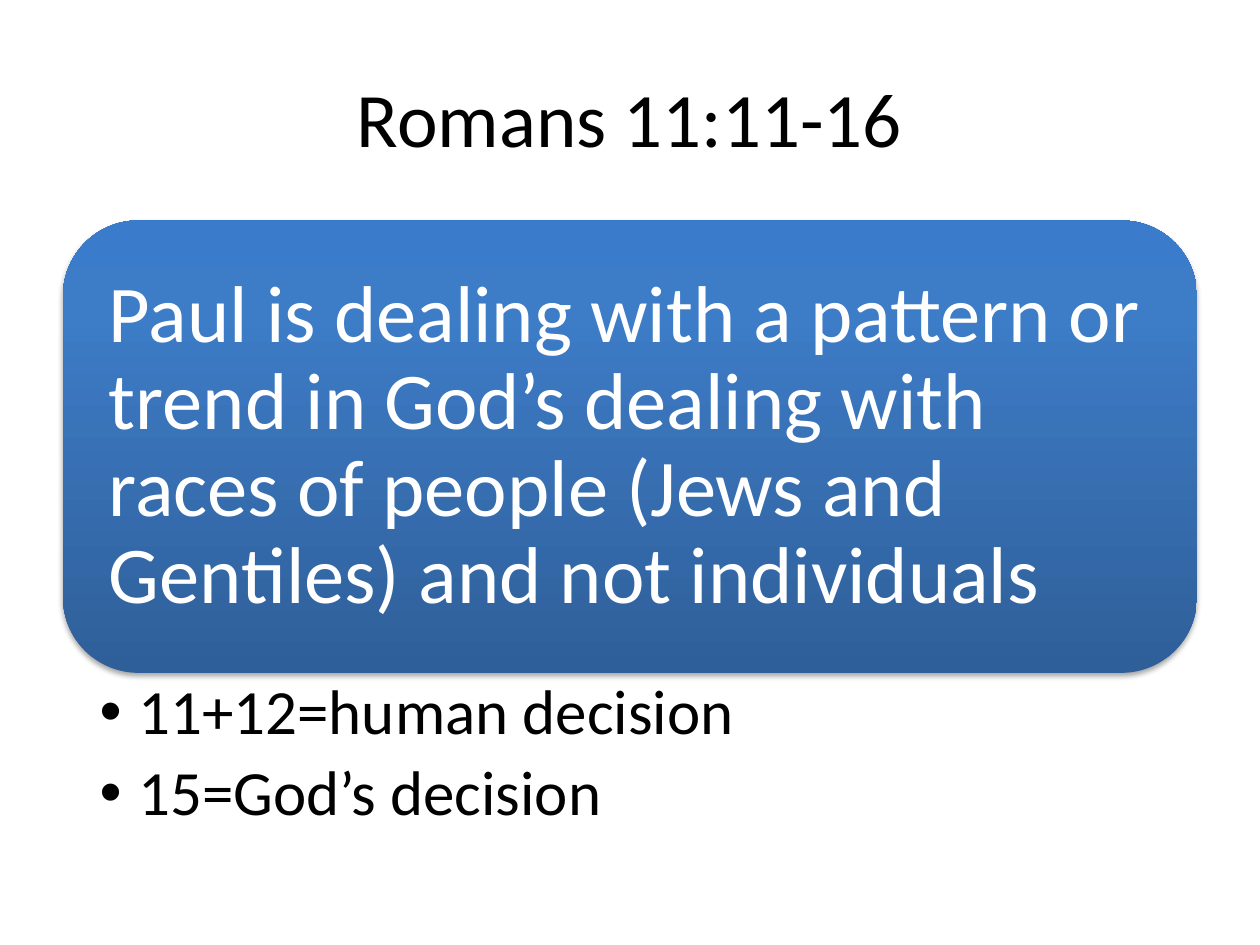
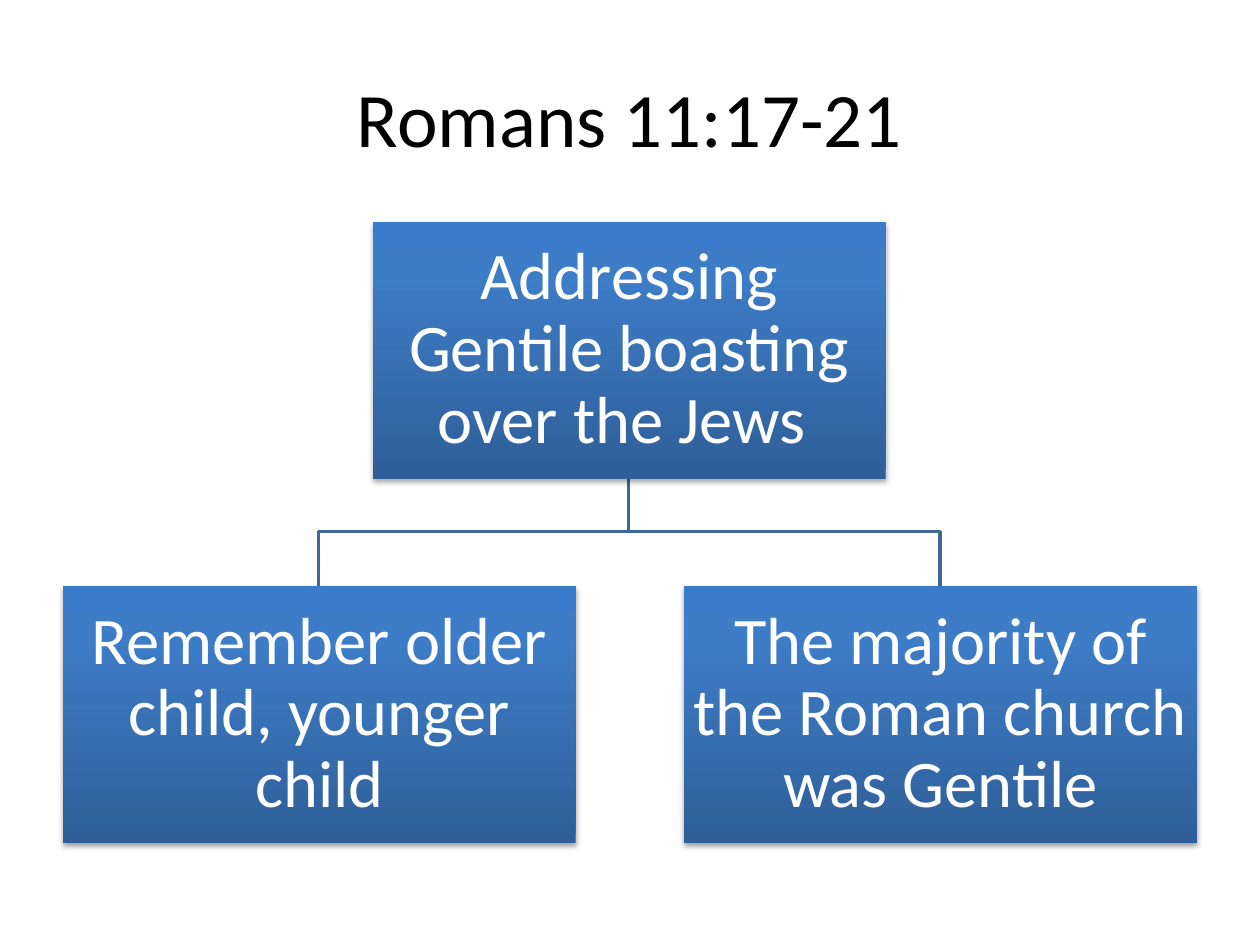
"""Build two Romans 11 slides: a key statement with notes, and a small hierarchy."""
from dataclasses import dataclass

from pptx import Presentation
from pptx import util as u
from pptx.dml.color import RGBColor
from pptx.enum import shapes, text
from pptx.oxml import ns, parse_xml

PX = 9144
FONT = "Calibri"
BLACK = RGBColor(0x00, 0x00, 0x00)
WHITE = RGBColor(0xFF, 0xFF, 0xFF)
BRANCH_BLUE = RGBColor(0x3F, 0x67, 0x97)
GRADIENT = (
    (0, RGBColor(0x2F, 0x5F, 0x99)),
    (80, RGBColor(0x3D, 0x7C, 0xC7)),
    (100, RGBColor(0x3A, 0x7C, 0xCB)),
)

TITLE_LAYOUT, TITLE_AND_BODY_LAYOUT = 5, 1
MARGIN, CONTENT_WIDTH = 50, 900
NODE_WIDTH, NODE_HEIGHT = 407, 204
ROOT_TOP, BRANCH_Y, CHILD_TOP = 176, 422, 465


@dataclass(frozen=True)
class Panel:
    """A gradient panel with white text, measured in px."""
    wording: str
    left: int
    top: int
    width: int = NODE_WIDTH
    height: int = NODE_HEIGHT
    outline: shapes.MSO_SHAPE = shapes.MSO_SHAPE.RECTANGLE
    size: int = 38
    inset: int = 3
    align: text.PP_ALIGN = text.PP_ALIGN.CENTER
    shadow_alpha: int = 38
    shadow_distance: int = 20000

    @property
    def center(self) -> int:
        """Return the horizontal middle."""
        return self.left + self.width // 2


def place(shape, left: int, top: int, width: int, height: int) -> None:
    """Move and size a shape in px."""
    shape.left, shape.top = left * PX, top * PX
    shape.width, shape.height = width * PX, height * PX


def set_insets(frame, left: int, top: int, right: int, bottom: int) -> None:
    """Set the four text insets in px."""
    frame.margin_left, frame.margin_top = left * PX, top * PX
    frame.margin_right, frame.margin_bottom = right * PX, bottom * PX


def style(paragraph, size: int, color: RGBColor) -> None:
    """Set the font of a paragraph."""
    paragraph.font.name = FONT
    paragraph.font.size = u.Pt(size)
    paragraph.font.color.rgb = color


def add_titled_slide(deck, layout: int, heading: str):
    """Add a slide with its formatted title."""
    slide = deck.slides.add_slide(deck.slide_layouts[layout])
    title = slide.shapes.title
    place(title, MARGIN, 30, CONTENT_WIDTH, 125)
    title.text_frame.text = heading
    title.text_frame.vertical_anchor = text.MSO_ANCHOR.MIDDLE
    paragraph = title.text_frame.paragraphs[0]
    paragraph.alignment = text.PP_ALIGN.CENTER
    style(paragraph, 44, BLACK)
    return slide


def shade(shape, panel: Panel) -> None:
    """Give a panel its upward gradient and soft shadow."""
    stops = "".join(
        f'<a:gs pos="{percent * 1000}"><a:srgbClr val="{color}"/></a:gs>'
        for percent, color in GRADIENT
    )
    shape.fill.background()
    properties = shape._element.spPr
    properties.replace(properties.find(ns.qn("a:noFill")), parse_xml(
        f'<a:gradFill {ns.nsdecls("a")} rotWithShape="1"><a:gsLst>{stops}</a:gsLst>'
        '<a:lin ang="16200000" scaled="0"/></a:gradFill>'))
    shape.line.fill.background()
    shape.shadow.inherit = False
    properties.find(ns.qn("a:effectLst")).append(parse_xml(
        f'<a:outerShdw {ns.nsdecls("a")} blurRad="40000" dist="{panel.shadow_distance}" '
        'dir="5400000" rotWithShape="0"><a:srgbClr val="000000">'
        f'<a:alpha val="{panel.shadow_alpha * 1000}"/></a:srgbClr></a:outerShdw>'))


def draw_panel(slide, panel: Panel) -> None:
    """Draw one panel with its wording."""
    shape = slide.shapes.add_shape(panel.outline, 0, 0, 0, 0)
    place(shape, panel.left, panel.top, panel.width, panel.height)
    shade(shape, panel)
    frame = shape.text_frame
    frame.word_wrap = True
    frame.vertical_anchor = text.MSO_ANCHOR.MIDDLE
    set_insets(frame, *[panel.inset] * 4)
    frame.text = panel.wording
    paragraph = frame.paragraphs[0]
    paragraph.alignment = panel.align
    paragraph.line_spacing = 0.9
    style(paragraph, panel.size, WHITE)


def draw_branch(slide, parent: Panel, child: Panel) -> None:
    """Draw the bent line from a parent to a child."""
    builder = slide.shapes.build_freeform(parent.center, parent.top + parent.height, scale=PX)
    builder.add_line_segments(
        [(parent.center, BRANCH_Y), (child.center, BRANCH_Y), (child.center, child.top)],
        close=False)
    branch = builder.convert_to_shape()
    branch.fill.background()
    branch.line.color.rgb = BRANCH_BLUE
    branch.line.width = u.Pt(2)
    branch.shadow.inherit = False


def fill_notes(body, notes: tuple[str, ...]) -> None:
    """Write the bulleted notes in the body placeholder."""
    place(body, MARGIN, 534, CONTENT_WIDTH, 135)
    frame = body.text_frame
    frame.text = "\n".join(notes)
    frame.auto_size = text.MSO_AUTO_SIZE.NONE
    set_insets(frame, 29, 6, 36, 6)
    for paragraph in frame.paragraphs:
        style(paragraph, 36, BLACK)
        paragraph.line_spacing = 0.9
        paragraph.space_before = u.Pt(0)
        paragraph.space_after = u.Pt(7.2)
        indents = paragraph._p.get_or_add_pPr()
        indents.set("marL", str(31 * PX))
        indents.set("indent", str(-31 * PX))


def build_pattern_slide(deck) -> None:
    """Build the slide on the pattern in God's dealing."""
    slide = add_titled_slide(deck, TITLE_AND_BODY_LAYOUT, "Romans 11:11-16")
    fill_notes(slide.placeholders[1], ("11+12=human decision", "15=God’s decision"))
    draw_panel(slide, Panel(
        "Paul is dealing with a pattern or trend in God’s dealing with races of people "
        "(Jews and Gentiles) and not individuals",
        MARGIN, 175, CONTENT_WIDTH, 359, shapes.MSO_SHAPE.ROUNDED_RECTANGLE,
        size=46, inset=19, align=text.PP_ALIGN.LEFT, shadow_alpha=35, shadow_distance=23000))


def build_boasting_slide(deck) -> None:
    """Build the slide on Gentile boasting."""
    slide = add_titled_slide(deck, TITLE_LAYOUT, "Romans 11:17-21")
    boasting = Panel(
        "Addressing Gentile boasting over the Jews ",
        MARGIN + (CONTENT_WIDTH - NODE_WIDTH) // 2, ROOT_TOP,
        shadow_alpha=35, shadow_distance=23000)
    reasons = (
        Panel("Remember older child, younger child", MARGIN, CHILD_TOP),
        Panel("The majority of the Roman church was Gentile",
              MARGIN + CONTENT_WIDTH - NODE_WIDTH, CHILD_TOP),
    )
    for reason in reasons:
        draw_branch(slide, boasting, reason)
    for panel in (boasting, *reasons):
        draw_panel(slide, panel)


def main() -> None:
    """Build and save the deck."""
    deck = Presentation()
    deck.slide_width, deck.slide_height = 1000 * PX, 750 * PX
    build_pattern_slide(deck)
    build_boasting_slide(deck)
    deck.save("out.pptx")


if __name__ == "__main__":
    main()
